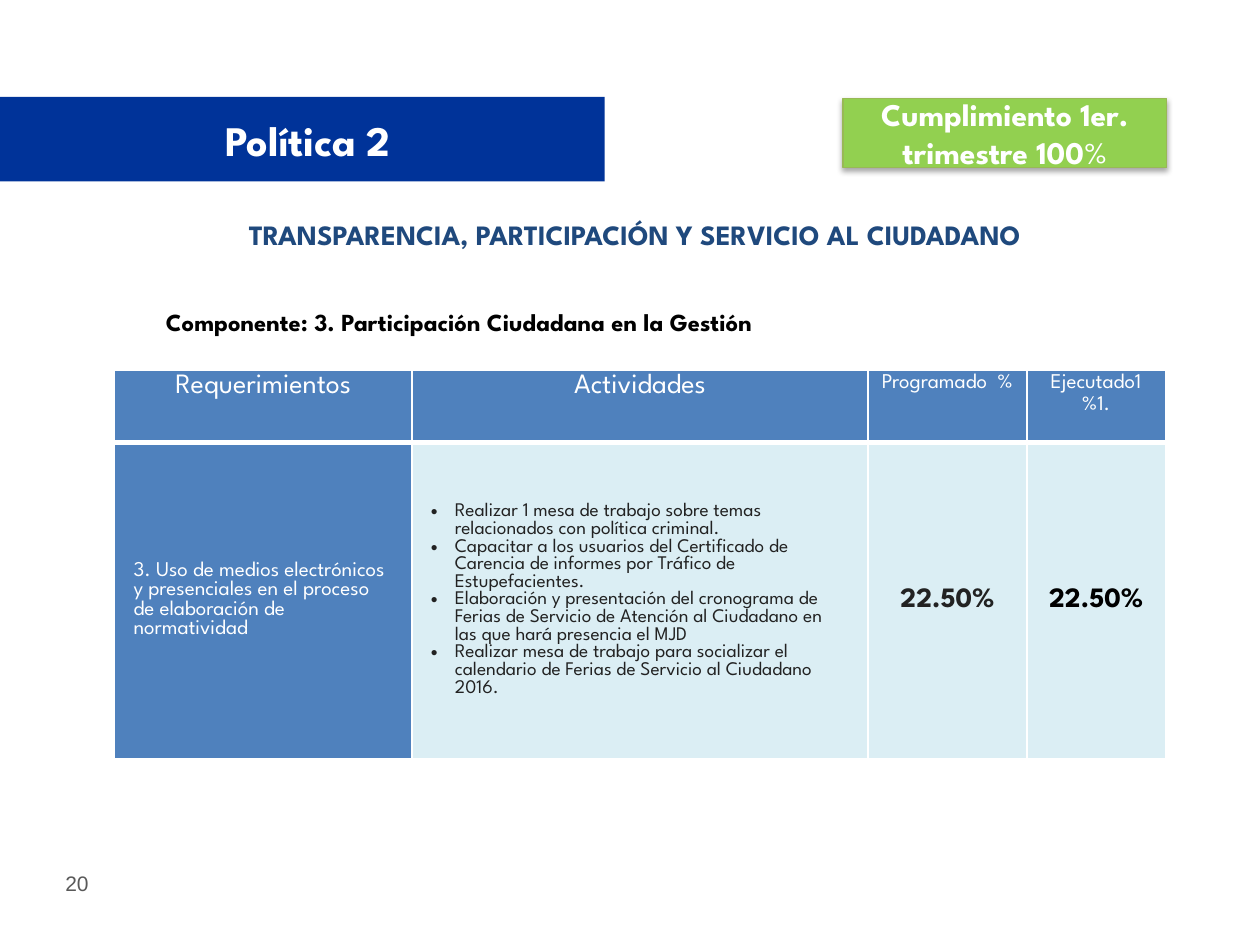
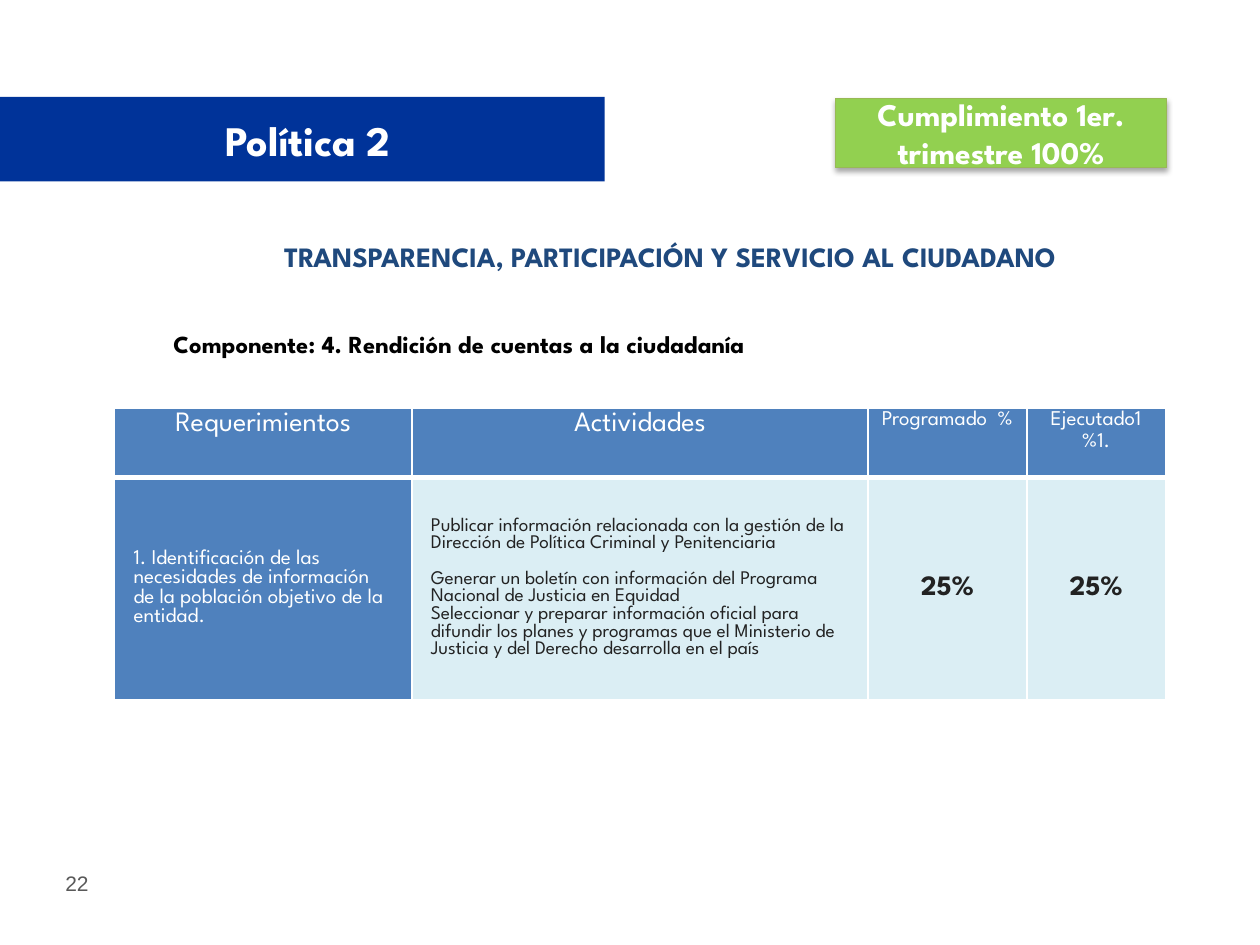
from lxml.etree import SubElement
from pptx import Presentation
from pptx.dml.color import RGBColor
from pptx.enum.shapes import MSO_SHAPE
from pptx.enum.text import MSO_ANCHOR, PP_ALIGN
from pptx.oxml.ns import qn
from pptx.util import Inches, Pt

HUES = {
    "band": "003399", "title": "1F497D", "head": "4F81BD", "body": "DBEEF4",
    "badge": "92D050", "edge": "98B955", "ink": "222222", "page": "595959",
    "white": "FFFFFF", "black": "000000",
}
FACE = "League Spartan"
COLS = [2.36, 3.62, 1.26, 1.1]
HEADS = [("Requerimientos", 16), ("Actividades", 16),
         ("Programado  %", 12), ("Ejecutado1 %1.", 12)]
SLIDES = [
    {
        "page": "20", "part": "Componente: 3. Participación Ciudadana en la Gestión",
        "theme": (1.36, 1.68), "part_top": 2.39, "top": 2.94, "rows": [0.57, 2.51],
        "badge": (6.69, 2.57), "sign_bold": False,
        "need": "3. Uso de medios electrónicos y presenciales en el proceso de elaboración de normatividad",
        "acts": [
            "Realizar 1 mesa de trabajo sobre temas relacionados con política criminal.",
            "Capacitar a los usuarios del Certificado de Carencia de informes por Tráfico de Estupefacientes.",
            "Elaboración y presentación del cronograma de Ferias de Servicio de Atención al Ciudadano en las que hará presencia el MJD",
            "Realizar mesa de trabajo para socializar el calendario de Ferias de Servicio al Ciudadano 2016.",
        ],
        "dots": True, "gaps": {}, "rate": "22.50%", "done": "black",
    },
    {
        "page": "22", "part": "Componente: 4. Rendición de cuentas a la ciudadanía",
        "theme": (1.64, 1.85), "part_top": 2.56, "top": 3.24, "rows": [0.55, 1.76],
        "badge": (6.63, 2.63), "sign_bold": True,
        "need": "1. Identificación de las necesidades de información de la población objetivo de la entidad.",
        "acts": [
            "Publicar información relacionada con la gestión de la Dirección de Política Criminal y Penitenciaria",
            "Generar un boletín con información del Programa Nacional de Justicia en Equidad",
            "Seleccionar y preparar información oficial para difundir los planes y programas que el Ministerio de Justicia y del Derecho desarrolla en el país",
        ],
        "dots": False, "gaps": {1: 10}, "rate": "25%", "done": "ink",
    },
]


def style(para, size, hue, bold=False, align=PP_ALIGN.CENTER, face=FACE):
    para.alignment = align
    font = para.font
    font.name, font.size, font.bold = face, Pt(size), bold
    font.color.rgb = RGBColor.from_string(HUES[hue])


def label(slide, text, place, *look, **more):
    box = slide.shapes.add_textbox(*map(Inches, place))
    frame = box.text_frame
    frame.word_wrap = True
    frame.text = text
    style(frame.paragraphs[0], *look, **more)
    return frame


deck = Presentation()
deck.slide_width, deck.slide_height = Inches(10), Inches(7.5)

for data in SLIDES:
    slide = deck.slides.add_slide(deck.slide_layouts[6])
    label(slide, data["page"], (0.42, 6.86, 0.75, 0.3), 12, "page",
          align=PP_ALIGN.LEFT, face="Arial")
    band = slide.shapes.add_shape(
        MSO_SHAPE.RECTANGLE, 0, Inches(0.77), Inches(4.8), Inches(0.67))
    band.shadow.inherit = False
    band.fill.solid()
    band.fill.fore_color.rgb = RGBColor.from_string(HUES["band"])
    band.line.fill.background()
    title = label(slide, "Política 2", (0.34, 0.87, 4.21, 0.48), 24, "white", True)
    title.vertical_anchor = MSO_ANCHOR.MIDDLE
    label(slide, data["part"], (0.37, data["part_top"], 6.55, 0.34), 14, "black", True)
    label(slide, "TRANSPARENCIA, PARTICIPACIÓN Y SERVICIO AL CIUDADANO",
          (*data["theme"], 7.36, 0.37), 16, "title", True)

    frame = slide.shapes.add_table(
        2, 4, Inches(0.91), Inches(data["top"]),
        Inches(sum(COLS)), Inches(sum(data["rows"])))
    table = frame.table
    for col, width in zip(table.columns, COLS):
        col.width = Inches(width)
    for row, height in zip(table.rows, data["rows"]):
        row.height = Inches(height)

    for r in range(2):
        for c in range(4):
            cell = table.cell(r, c)
            props = cell._tc.get_or_add_tcPr()
            for side in "LRTB":
                thick = (r, side) in [(0, "B"), (1, "T")]
                line = SubElement(props, qn("a:ln" + side), w=str(Pt(3 if thick else 1)))
                fill = SubElement(line, qn("a:solidFill"))
                SubElement(fill, qn("a:srgbClr"), val=HUES["white"])
            cell.fill.solid()
            hue = "head" if r == 0 or c == 0 else "body"
            cell.fill.fore_color.rgb = RGBColor.from_string(HUES[hue])
            if r == 0:
                pad, rise = 0.07, 0
            else:
                pad = rise = 0.15 if c < 2 else 0
                cell.vertical_anchor = MSO_ANCHOR.MIDDLE
            cell.margin_left = cell.margin_right = Inches(pad)
            cell.margin_top = cell.margin_bottom = Inches(rise)

    for c, (text, size) in enumerate(HEADS):
        cell = table.cell(0, c)
        cell.text = text
        para = cell.text_frame.paragraphs[0]
        style(para, size, "white")
        para.line_spacing = 1.15

    need = table.cell(1, 0)
    need.text = data["need"]
    style(need.text_frame.paragraphs[0], 12, "white", align=PP_ALIGN.LEFT)

    acts = table.cell(1, 1)
    acts.text = "\n".join(data["acts"])
    for i, para in enumerate(acts.text_frame.paragraphs):
        if data["dots"]:
            props = para._p.get_or_add_pPr()
            props.set("marL", str(Inches(0.19)))
            props.set("indent", str(-Inches(0.19)))
            SubElement(props, qn("a:buFont"), typeface="Arial")
            SubElement(props, qn("a:buChar"), char="•")
        style(para, 11, "ink", align=PP_ALIGN.LEFT)
        if i in data["gaps"]:
            para.space_before = Pt(data["gaps"][i])

    for c, hue in [(2, "ink"), (3, data["done"])]:
        cell = table.cell(1, c)
        cell.text = data["rate"]
        style(cell.text_frame.paragraphs[0], 16, hue, True)

    left, width = data["badge"]
    badge = slide.shapes.add_shape(
        MSO_SHAPE.RECTANGLE, Inches(left), Inches(0.78), Inches(width), Inches(0.55))
    badge.fill.solid()
    badge.fill.fore_color.rgb = RGBColor.from_string(HUES["badge"])
    badge.line.color.rgb = RGBColor.from_string(HUES["edge"])
    badge.line.width = Pt(0.75)
    badge.shadow.inherit = False
    glow = badge._element.spPr.find(qn("a:effectLst"))
    shade = SubElement(glow, qn("a:outerShdw"), blurRad=str(Pt(3.1)),
                       dist=str(Pt(1.8)), dir="5400000", rotWithShape="0")
    tint = SubElement(shade, qn("a:srgbClr"), val=HUES["black"])
    SubElement(tint, qn("a:alpha"), val="35000")
    badge.text_frame.word_wrap = True
    badge.text_frame.vertical_anchor = MSO_ANCHOR.MIDDLE
    para = badge.text_frame.paragraphs[0]
    style(para, 18, "white", True)
    para.add_run().text = "Cumplimiento 1er. trimestre 100"
    sign = para.add_run()
    sign.text = "%"
    sign.font.bold = data["sign_bold"]

deck.save("out.pptx")
